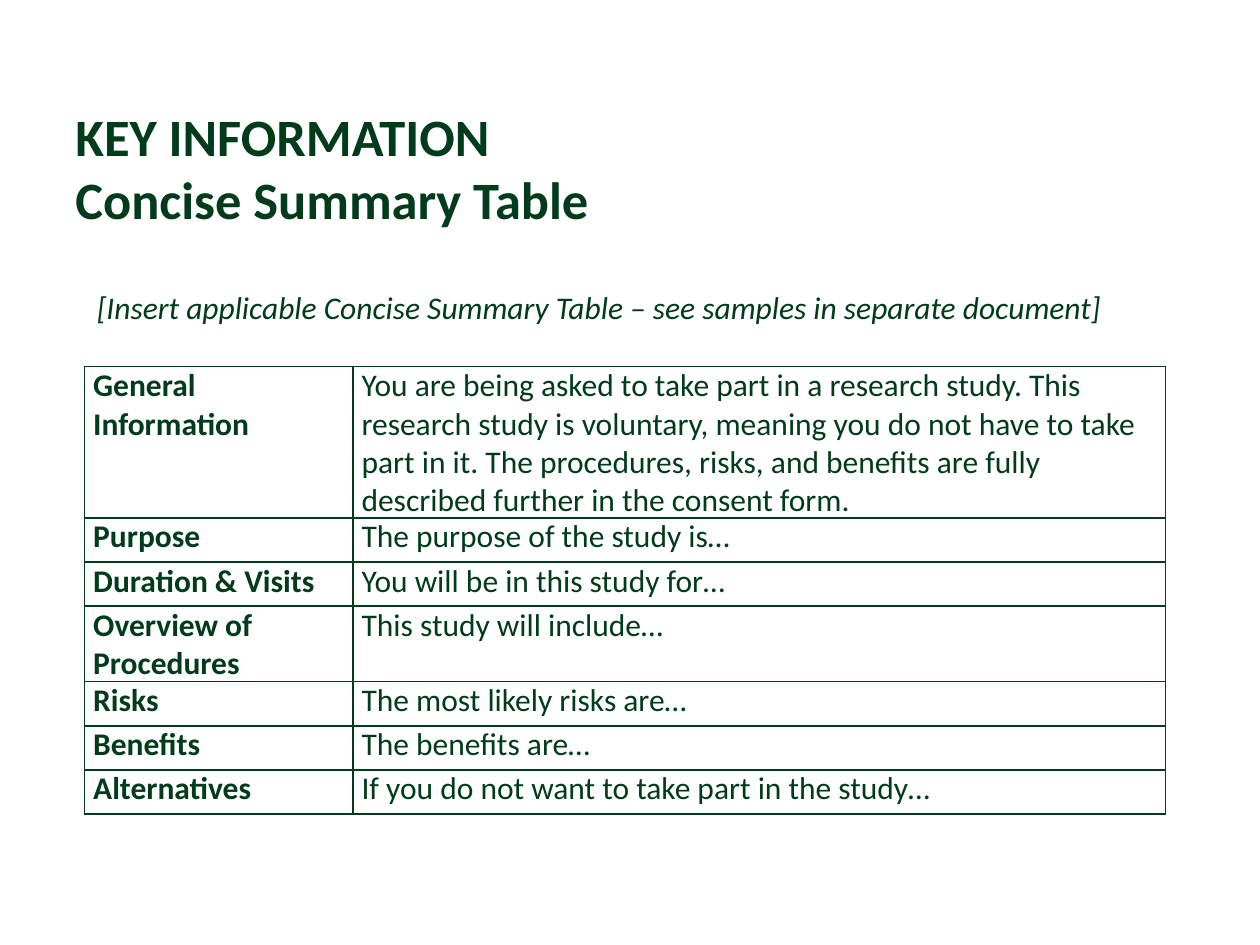
from lxml import etree
from pptx import Presentation
from pptx.dml.color import RGBColor
from pptx.enum import text
from pptx.oxml import ns
from pptx.util import Inches, Pt

GREEN = RGBColor(0x00, 0x3C, 0x19)
FONT = "Calibri"
COLUMN_WIDTHS = (2.13, 6.45)
ROW_HEIGHTS = (1.06,) + (0.35,) * 6
SUMMARY_ROWS = [
    ("General Information",
     "You are being asked to take part in a research study. This research "
     "study is voluntary, meaning you do not have to take part in it. The "
     "procedures, risks, and benefits are fully described further in the "
     "consent form."),
    ("Purpose", "The purpose of the study is…"),
    ("Duration & Visits", "You will be in this study for…"),
    ("Overview of Procedures", "This study will include…"),
    ("Risks", "The most likely risks are…"),
    ("Benefits", "The benefits are…"),
    ("Alternatives", "If you do not want to take part in the study…"),
]


def write_text(frame, content, size=18, bold=False, italic=False):
    """Fill a text frame; a line feed starts a new paragraph."""
    frame.word_wrap = True
    for index, line in enumerate(content.split("\n")):
        paragraph = frame.paragraphs[0] if index == 0 else frame.add_paragraph()
        paragraph.alignment = text.PP_ALIGN.LEFT
        run = paragraph.add_run()
        run.text = line
        run.font.name = FONT
        run.font.size = Pt(size)
        run.font.bold = bold
        run.font.italic = italic
        run.font.color.rgb = GREEN


def add_text_box(slide, box, content, anchor=text.MSO_ANCHOR.TOP, **formatting):
    shape = slide.shapes.add_textbox(*map(Inches, box))
    shape.text_frame.vertical_anchor = anchor
    write_text(shape.text_frame, content, **formatting)


def set_borders(cell, color, width):
    """Draw all four edges of a cell; they must precede its fill."""
    properties = cell._tc.get_or_add_tcPr()
    for index, edge in enumerate(("a:lnL", "a:lnR", "a:lnT", "a:lnB")):
        line = etree.Element(ns.qn(edge), w=str(Pt(width)))
        fill = etree.SubElement(line, ns.qn("a:solidFill"))
        etree.SubElement(fill, ns.qn("a:srgbClr"), val=str(color))
        properties.insert(index, line)


def add_summary_table(slide, box):
    frame = slide.shapes.add_table(
        len(SUMMARY_ROWS), len(COLUMN_WIDTHS), *map(Inches, box))
    table = frame.table
    table.first_row = table.horz_banding = False
    for column, width in zip(table.columns, COLUMN_WIDTHS):
        column.width = Inches(width)
    for row, height, contents in zip(table.rows, ROW_HEIGHTS, SUMMARY_ROWS):
        row.height = Inches(height)
        for index, (cell, content) in enumerate(zip(row.cells, contents)):
            cell.margin_left = cell.margin_right = Inches(0.07)
            cell.margin_top = cell.margin_bottom = 0
            cell.fill.background()
            set_borders(cell, GREEN, 1)
            write_text(cell.text_frame, content, bold=index == 0)


def main():
    presentation = Presentation()
    presentation.slide_width = Inches(10)
    presentation.slide_height = Inches(7.5)
    slide = presentation.slides.add_slide(presentation.slide_layouts[6])

    # Title
    add_text_box(slide, (0.5, 0.79, 9, 1.07),
                 "KEY INFORMATION\nConcise Summary Table",
                 anchor=text.MSO_ANCHOR.MIDDLE, size=30, bold=True)
    # Summary table
    add_summary_table(slide, (0.67, 2.91, sum(COLUMN_WIDTHS), sum(ROW_HEIGHTS)))
    # Instruction above the table
    add_text_box(slide, (0.67, 2.24, 8.58, 0.71),
                 "[Insert applicable Concise Summary Table – see samples in "
                 "separate document]", italic=True)

    presentation.save("out.pptx")


if __name__ == "__main__":
    main()
